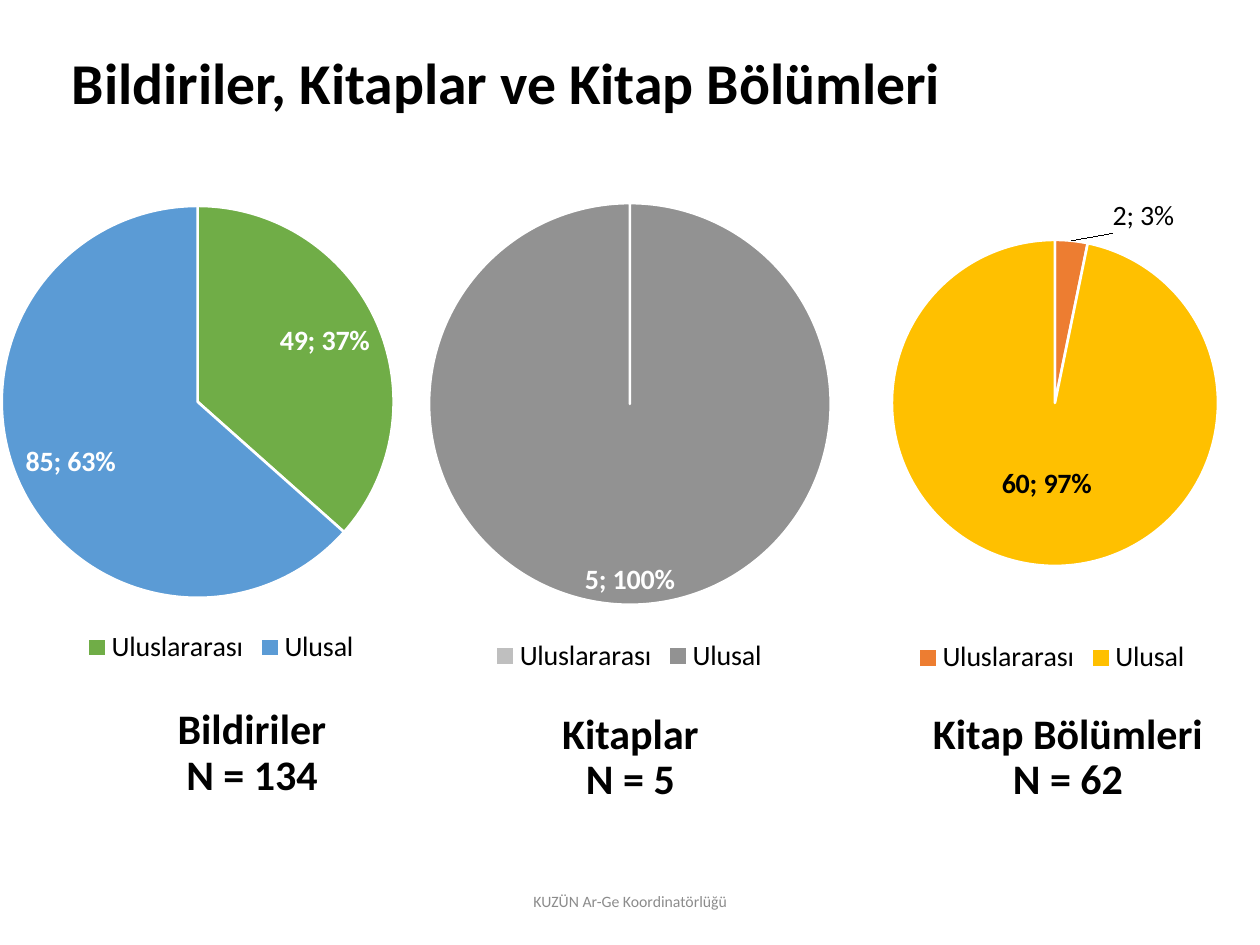
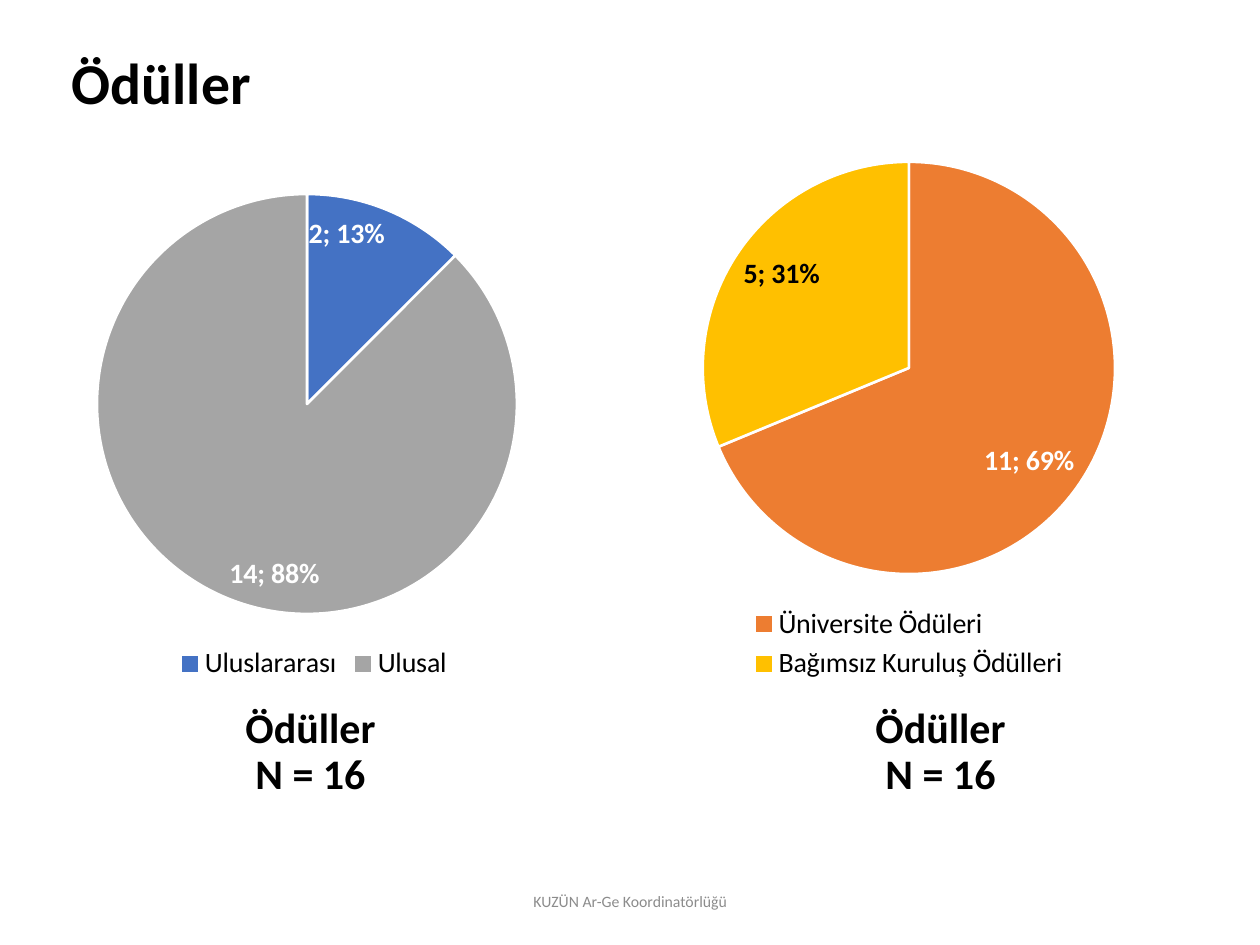
from dataclasses import dataclass

from lxml.etree import SubElement
from pptx import Presentation
from pptx.chart.data import CategoryChartData
from pptx.dml.color import RGBColor
from pptx.enum.chart import XL_CHART_TYPE, XL_LABEL_POSITION, XL_LEGEND_POSITION
from pptx.enum.text import MSO_ANCHOR, PP_ALIGN
from pptx.oxml import parse_xml
from pptx.oxml.ns import nsdecls, qn
from pptx.util import Pt


@dataclass(frozen=True)
class Theme:
    font: str = "Calibri"
    black: str = "000000"
    white: str = "FFFFFF"
    footer_gray: str = "8C8C8C"
    green: str = "70AD47"
    light_blue: str = "5B9BD5"
    blue: str = "4472C4"
    orange: str = "ED7D31"
    gold: str = "FFC000"
    silver: str = "BFBFBF"
    gray: str = "A5A5A5"
    dark_gray: str = "929292"
    title_size: float = 33
    caption_size: float = 24
    chart_size: float = 16
    footer_size: float = 9


THEME = Theme()
SCOPES = ("Uluslararası", "Ulusal")
INSIDE = XL_LABEL_POSITION.INSIDE_END


@dataclass(frozen=True)
class Label:
    color: str = THEME.white
    bold: bool = True
    position: XL_LABEL_POSITION = INSIDE
    shift: float = 0


WHITE_LABEL = Label()
BLACK_LABEL = Label(THEME.black)


def style_font(font, size, color, bold=False):
    font.name = THEME.font
    font.size = Pt(size)
    font.bold = bold
    font.color.rgb = RGBColor.from_string(color)


def add_text(slide, box, lines, size, color=THEME.black, bold=True,
             alignment=PP_ALIGN.CENTER, line_spacing=0.9):
    shape = slide.shapes.add_textbox(*map(Pt, box))
    frame = shape.text_frame
    frame.word_wrap = True
    frame.vertical_anchor = MSO_ANCHOR.MIDDLE
    frame.text = "\n".join(lines)
    for paragraph in frame.paragraphs:
        paragraph.alignment = alignment
        paragraph.line_spacing = line_spacing
        style_font(paragraph.font, size, color, bold)


def add_caption(slide, box, name, total):
    add_text(slide, box, (name, f"N = {total}"), THEME.caption_size)


def add_titled_slide(presentation, title):
    slide = presentation.slides.add_slide(presentation.slide_layouts[6])
    add_text(slide, (34, 16.5, 620.5, 65.5), [title], THEME.title_size,
             alignment=PP_ALIGN.LEFT)
    add_text(slide, (238.5, 500.5, 243, 28.5), ["KUZÜN Ar-Ge Koordinatörlüğü"],
             THEME.footer_size, THEME.footer_gray, bold=False, line_spacing=1)
    return slide


def place_pie(chart, box, center, radius):
    left, top, width, height = box
    plot_area = chart.element.find(".//" + qn("c:plotArea"))
    for layout in plot_area.findall(qn("c:layout")):
        plot_area.remove(layout)
    fractions = {
        "x": (center[0] - radius - left) / width,
        "y": (center[1] - radius - top) / height,
        "w": 2 * radius / width,
        "h": 2 * radius / height,
    }
    layout = parse_xml(
        f'<c:layout {nsdecls("c")}><c:manualLayout><c:layoutTarget val="inner"/>'
        '<c:xMode val="edge"/><c:yMode val="edge"/></c:manualLayout></c:layout>')
    for name, value in fractions.items():
        SubElement(layout[0], qn(f"c:{name}")).set("val", f"{value:.4f}")
    plot_area.insert(0, layout)


def label_point(series, index, label):
    data_label = series.points[index].data_label
    style_font(data_label.font, THEME.chart_size, label.color, label.bold)
    data_label.position = label.position
    element = chart_label = series.data_labels._element.findall(qn("c:dLbl"))[-1]
    chart_label.find(qn("c:showPercent")).set("val", "1")
    SubElement(element, qn("c:separator")).text = "; "
    if label.shift:
        element.insert(1, parse_xml(
            f'<c:layout {nsdecls("c")}><c:manualLayout><c:x val="{label.shift}"/>'
            '<c:y val="0"/></c:manualLayout></c:layout>'))


def add_pie(slide, box, center, radius, categories, values, colors, labels):
    data = CategoryChartData()
    data.categories = categories
    data.add_series("Series 1", values)
    chart = slide.shapes.add_chart(
        XL_CHART_TYPE.PIE, *map(Pt, box), data).chart
    chart.has_title = False
    style_font(chart.font, THEME.chart_size, THEME.black)
    chart.has_legend = True
    chart.legend.position = XL_LEGEND_POSITION.BOTTOM
    chart.legend.include_in_layout = False
    style_font(chart.legend.font, THEME.chart_size, THEME.black)
    chart.plots[0].vary_by_categories = True
    place_pie(chart, box, center, radius)

    series = chart.plots[0].series[0]
    series.data_labels.show_value = False
    for index, (color, label) in enumerate(zip(colors, labels)):
        slice_format = series.points[index].format
        slice_format.fill.solid()
        slice_format.fill.fore_color.rgb = RGBColor.from_string(color)
        slice_format.line.color.rgb = RGBColor.from_string(THEME.white)
        slice_format.line.width = Pt(1.5)
        if label:
            label_point(series, index, label)


def build_publications(presentation):
    slide = add_titled_slide(presentation, "Bildiriler, Kitaplar ve Kitap Bölümleri")
    add_caption(slide, (84, 404.5, 120, 52.5), "Bildiriler", 134)
    add_caption(slide, (500.5, 407, 219.5, 52.5), "Kitap Bölümleri", 62)
    add_caption(slide, (250.5, 407, 219.5, 52.5), "Kitaplar", 5)
    add_pie(slide, (-10.8, 97.2, 274.3, 285.8), (113, 229.7), 112,
            SCOPES, (49, 85), (THEME.green, THEME.light_blue),
            (WHITE_LABEL, WHITE_LABEL))
    add_pie(slide, (456.5, 103, 289.4, 285.8), (602.9, 230.3), 93.2,
            SCOPES, (2, 60), (THEME.orange, THEME.gold),
            (Label(THEME.black, False, XL_LABEL_POSITION.OUTSIDE_END, 0.08),
             Label(THEME.black, True, XL_LABEL_POSITION.CENTER)))
    add_pie(slide, (203, 105.8, 313.2, 282.2), (360, 230.9), 114.8,
            SCOPES, (0, 5), (THEME.silver, THEME.dark_gray),
            (None, WHITE_LABEL))


def build_awards(presentation):
    slide = add_titled_slide(presentation, "Ödüller")
    add_caption(slide, (117.4, 404, 120, 52.5), "Ödüller", 16)
    add_caption(slide, (427.7, 404, 219.5, 52.5), "Ödüller", 16)
    add_pie(slide, (10.8, 82, 337.7, 310.3), (175.4, 230.9), 120,
            SCOPES, (2, 14), (THEME.blue, THEME.gray),
            (WHITE_LABEL, WHITE_LABEL))
    add_pie(slide, (329.8, 82, 379.4, 310.3), (519.4, 210.3), 117.8,
            ("Üniversite Ödüleri", "Bağımsız Kuruluş Ödülleri"), (11, 5),
            (THEME.orange, THEME.gold), (WHITE_LABEL, BLACK_LABEL))


def main():
    presentation = Presentation()
    presentation.slide_width = Pt(720)
    presentation.slide_height = Pt(540)
    build_publications(presentation)
    build_awards(presentation)
    presentation.save("out.pptx")


if __name__ == "__main__":
    main()
